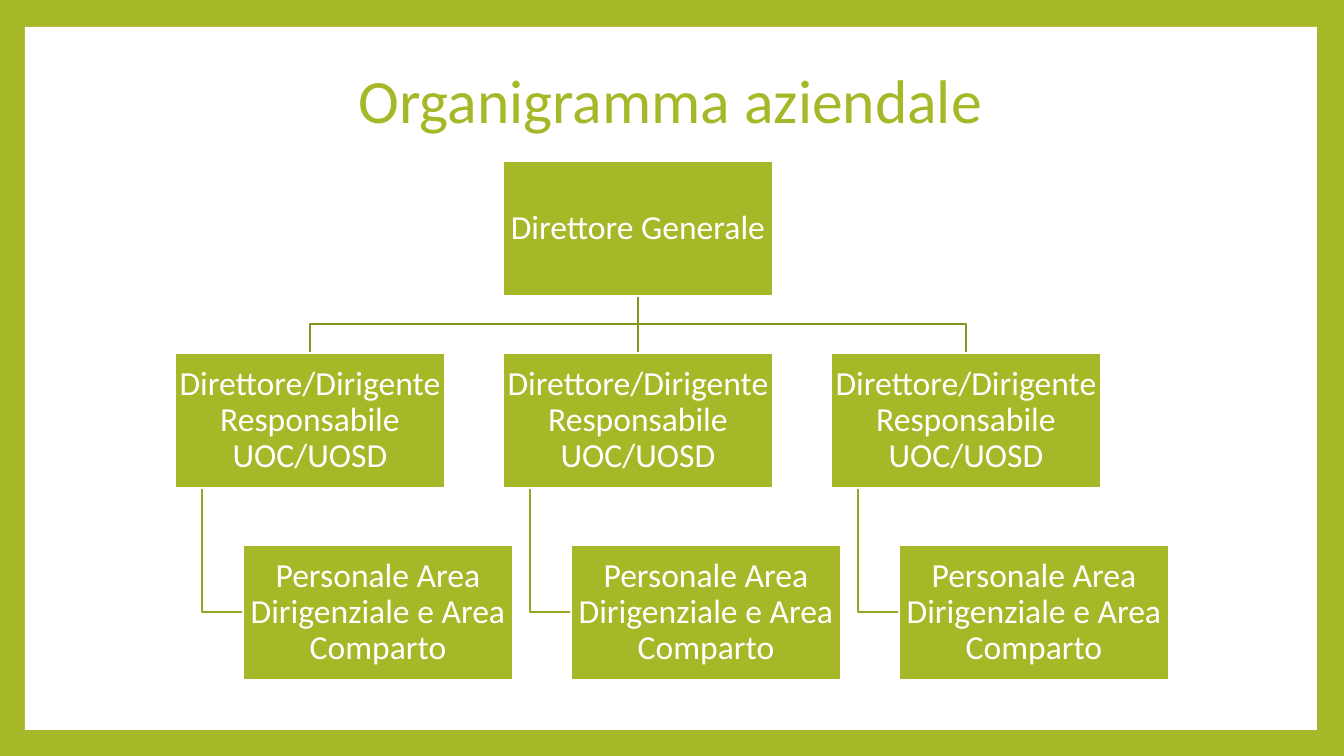
from lxml import etree
from pptx import Presentation
from pptx.dml.color import RGBColor
from pptx.enum.shapes import MSO_CONNECTOR, MSO_SHAPE
from pptx.enum.text import MSO_ANCHOR, PP_ALIGN
from pptx.oxml.ns import qn
from pptx.util import Emu, Pt

RECTANGLE = MSO_SHAPE.RECTANGLE
STRAIGHT = MSO_CONNECTOR.STRAIGHT
CENTER = PP_ALIGN.CENTER
MIDDLE = MSO_ANCHOR.MIDDLE

FONT = "Calibri"
GREEN, WHITE = "A6B727", "FFFFFF"
UPPER_LINE, LOWER_LINE = "85931F", "97A623"

# Chart grid in px: three columns, three rows
BOX_WIDTH, BOX_HEIGHT = 270, 135
COLUMNS = [175 + 328 * index for index in range(3)]
TOP_ROW, MANAGER_ROW, STAFF_ROW = [161 + 192 * index for index in range(3)]
STAFF_INDENT, STEM_INDENT = 68, 27

GENERAL = "Direttore Generale"
MANAGER = "Direttore/Dirigente Responsabile UOC/UOSD"
STAFF = "Personale Area Dirigenziale e Area Comparto"


def px(value):
    return Emu(round(value * 914400 / 100.8))


def color(code):
    return RGBColor.from_string(code)


def format_line(line, code):
    line.color.rgb = color(code)
    line.width = Pt(1.5)


def format_text(text_frame, text, size, code):
    text_frame.text = text
    text_frame.word_wrap = True
    text_frame.vertical_anchor = MIDDLE
    paragraph = text_frame.paragraphs[0]
    paragraph.alignment = CENTER
    paragraph.line_spacing = 0.9
    paragraph.font.name = FONT
    paragraph.font.size = Pt(size)
    paragraph.font.color.rgb = color(code)


def add_rectangle(slide, left, top, width, height, fill):
    shape = slide.shapes.add_shape(RECTANGLE, px(left), px(top), px(width), px(height))
    shape.shadow.inherit = False
    shape.fill.solid()
    shape.fill.fore_color.rgb = color(fill)
    shape.line.fill.background()
    return shape


def add_box(slide, left, top, text):
    box = add_rectangle(slide, left, top, BOX_WIDTH, BOX_HEIGHT, GREEN)
    format_line(box.line, WHITE)
    frame = box.text_frame
    frame.margin_left = frame.margin_right = px(2)
    frame.margin_top = frame.margin_bottom = px(2)
    format_text(frame, text, 24, WHITE)
    return box


def add_elbow(slide, points, code):
    start, *others = [(px(x), px(y)) for x, y in points]
    builder = slide.shapes.build_freeform(*start)
    builder.add_line_segments(others, close=False)
    elbow = builder.convert_to_shape()
    elbow.shadow.inherit = False
    elbow.fill.background()
    format_line(elbow.line, code)


def add_straight(slide, x, top, bottom, code):
    connector = slide.shapes.add_connector(STRAIGHT, px(x), px(top), px(x), px(bottom))
    format_line(connector.line, code)
    etree.SubElement(connector.element.spPr, qn("a:effectLst"))
    return connector


def add_title(slide, text):
    title = slide.shapes.title
    title.left, title.top, title.width, title.height = px(126), px(47), px(1089), px(114)
    format_text(title.text_frame, text, 44, GREEN)
    return title


def add_chart_lines(slide):
    center = COLUMNS[1] + BOX_WIDTH // 2
    top_bottom = TOP_ROW + BOX_HEIGHT
    manager_bottom = MANAGER_ROW + BOX_HEIGHT
    branch = (top_bottom + MANAGER_ROW) // 2
    staff_middle = STAFF_ROW + BOX_HEIGHT // 2
    for left in COLUMNS:
        stem = left + STEM_INDENT
        add_elbow(slide, [(stem, manager_bottom), (stem, staff_middle),
                          (left + STAFF_INDENT, staff_middle)], LOWER_LINE)
    for left in (COLUMNS[0], COLUMNS[2]):
        end = left + BOX_WIDTH // 2
        add_elbow(slide, [(center, top_bottom), (center, branch),
                          (end, branch), (end, MANAGER_ROW)], UPPER_LINE)
    return add_straight(slide, center, top_bottom, MANAGER_ROW, UPPER_LINE)


def main():
    presentation = Presentation()
    presentation.slide_width, presentation.slide_height = px(1344), px(756)
    slide = presentation.slides.add_slide(presentation.slide_layouts[5])

    # Green frame, with the white panel behind the title
    slide.background.fill.solid()
    slide.background.fill.fore_color.rgb = color(GREEN)
    title = add_title(slide, "Organigramma aziendale")
    panel = add_rectangle(slide, 25, 27, 1292, 703, WHITE)
    title.element.addprevious(panel.element)

    # Lines lie behind the boxes
    trunk = add_chart_lines(slide)
    general = add_box(slide, COLUMNS[1], TOP_ROW, GENERAL)
    managers = []
    for left in COLUMNS:
        managers.append(add_box(slide, left, MANAGER_ROW, MANAGER))
        add_box(slide, left + STAFF_INDENT, STAFF_ROW, STAFF)
    trunk.begin_connect(general, 2)
    trunk.end_connect(managers[1], 0)

    presentation.save("out.pptx")


if __name__ == "__main__":
    main()
